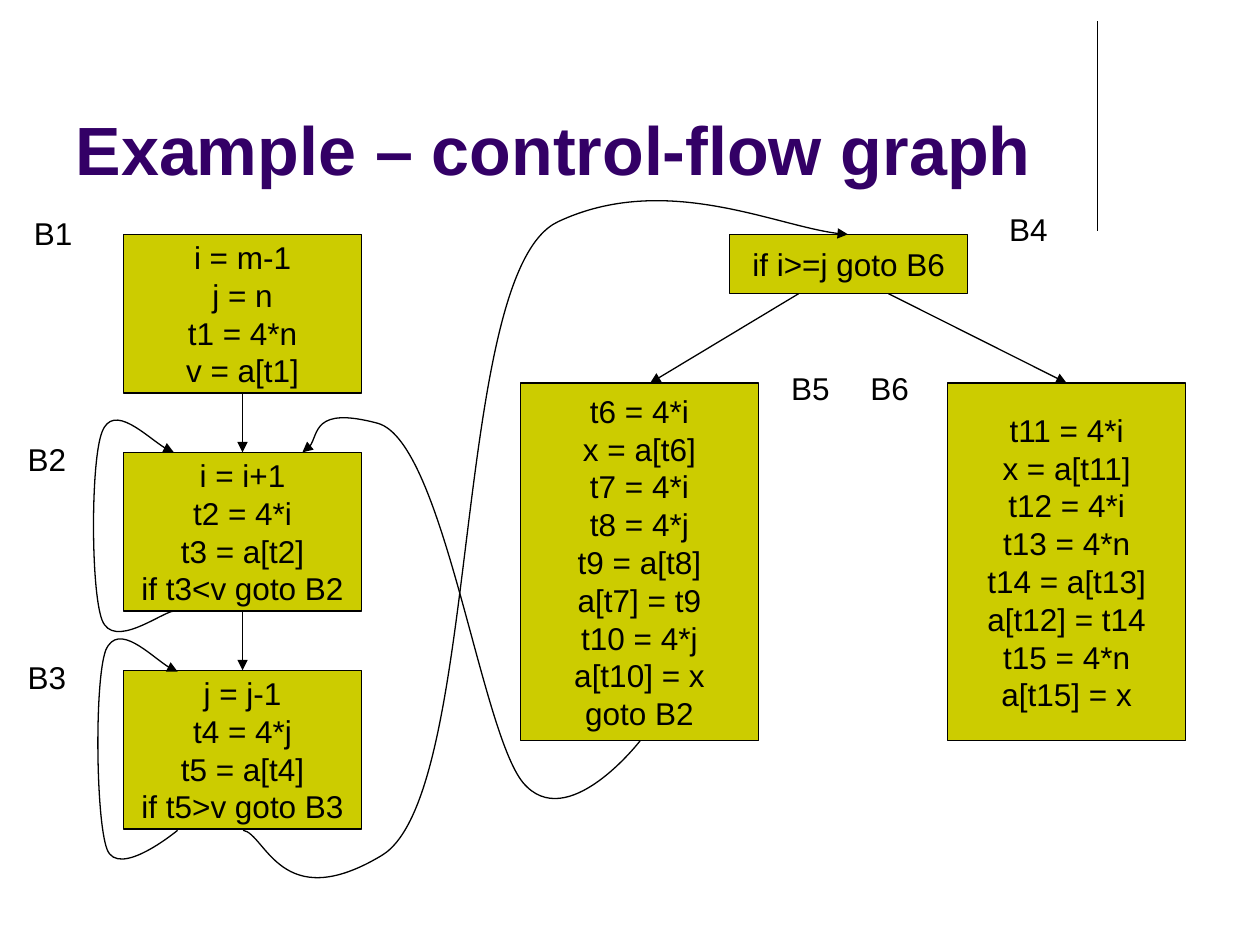
import pptx
import pptx.dml.color
import pptx.enum.shapes
import pptx.enum.text
import pptx.oxml
import pptx.oxml.ns
import pptx.util
from pptx.util import Inches

COLORS = {"title": "330066", "block": "CCCC00", "ink": "000000"}
ALIGN = pptx.enum.text.PP_ALIGN
ANCHOR = pptx.enum.text.MSO_ANCHOR
AUTO_SIZE = pptx.enum.text.MSO_AUTO_SIZE
BOTTOM_SIDE, TOP_SIDE = 2, 0
BLOCK_WIDTH = 1.89

# name: (left, top, height, code lines, label left, label top)
BLOCKS = {
    "B1": (0.98, 1.86, 1.26,
           ["i = m-1", "j = n", "t1 = 4*n", "v = a[t1]"], 0.17, 1.65),
    "B2": (0.98, 3.59, 1.26,
           ["i = i+1", "t2 = 4*i", "t3 = a[t2]", "if t3<v goto B2"], 0.12, 3.44),
    "B3": (0.98, 5.32, 1.26,
           ["j = j-1", "t4 = 4*j", "t5 = a[t4]", "if t5>v goto B3"], 0.12, 5.17),
    "B4": (5.79, 1.86, 0.47, ["if i>=j goto B6"], 7.91, 1.62),
    "B5": (4.13, 3.04, 2.84,
           ["t6 = 4*i", "x = a[t6]", "t7 = 4*i", "t8 = 4*j", "t9 = a[t8]",
            "a[t7] = t9", "t10 = 4*j", "a[t10] = x", "goto B2"], 6.18, 2.88),
    "B6": (7.52, 3.04, 2.84,
           ["t11 = 4*i", "x = a[t11]", "t12 = 4*i", "t13 = 4*n", "t14 = a[t13]",
            "a[t12] = t14", "t15 = 4*n", "a[t15] = x"], 6.81, 2.88),
}

# Start point, then two control points and an end point per Bezier segment
JUMPS = {
    "B3 to B4": [(1.93, 6.59), (2.11, 6.62), (2.23, 7.27), (3.03, 6.79),
                 (3.83, 6.31), (3.57, 2.16), (4.43, 1.76),
                 (5.28, 1.36), (6.25, 1.84), (6.73, 1.86)],
    "B5 to B2": [(5.08, 5.88), (5.08, 5.88), (4.5, 6.63), (4.15, 6.21),
                 (3.81, 5.79), (3.52, 3.51), (3, 3.36),
                 (2.48, 3.22), (2.53, 3.55), (2.4, 3.59)],
    "B2 to B2": [(1.38, 4.85), (1.28, 4.86), (0.9, 5.16), (0.81, 4.92),
                 (0.72, 4.68), (0.72, 3.66), (0.81, 3.43),
                 (0.9, 3.19), (1.26, 3.56), (1.38, 3.59)],
    "B3 to B3": [(1.41, 6.59), (1.41, 6.59), (0.94, 6.98), (0.85, 6.74),
                 (0.76, 6.5), (0.75, 5.4), (0.84, 5.16),
                 (0.94, 4.93), (1.29, 5.3), (1.41, 5.33)],
}


def rgb(name):
    return pptx.dml.color.RGBColor.from_string(COLORS[name])


def write_text(frame, lines, size=18, color="ink", bold=False, align=ALIGN.LEFT,
               anchor=ANCHOR.TOP, wrap=False, auto_size=AUTO_SIZE.NONE):
    frame.word_wrap = wrap
    frame.auto_size = auto_size
    frame.vertical_anchor = anchor
    for index, line in enumerate(lines):
        paragraph = frame.paragraphs[0] if index == 0 else frame.add_paragraph()
        paragraph.alignment = align
        run = paragraph.add_run()
        run.text = line
        run.font.name = "Arial"
        run.font.size = pptx.util.Pt(size)
        run.font.bold = bold
        run.font.color.rgb = rgb(color)


def style_line(line, arrow=False):
    line.color.rgb = rgb("ink")
    line.width = pptx.util.Pt(0.75)
    if arrow:
        pptx.oxml.ns.qn("a:tailEnd")
        tail = line._get_or_add_ln().makeelement(
            pptx.oxml.ns.qn("a:tailEnd"), {"type": "triangle"})
        line._get_or_add_ln().append(tail)


def add_title(slide, text):
    title = slide.shapes.title
    title.left, title.top = Inches(0.5), Inches(0.13)
    title.width, title.height = Inches(8.25), Inches(1.42)
    write_text(title.text_frame, [text], size=39, color="title", bold=True,
               anchor=ANCHOR.BOTTOM, wrap=True)


def add_block(slide, left, top, height, code):
    block = slide.shapes.add_shape(
        pptx.enum.shapes.MSO_SHAPE.RECTANGLE,
        Inches(left), Inches(top), Inches(BLOCK_WIDTH), Inches(height))
    block.shadow.inherit = False
    block.fill.solid()
    block.fill.fore_color.rgb = rgb("block")
    style_line(block.line)
    write_text(block.text_frame, code, align=ALIGN.CENTER, anchor=ANCHOR.MIDDLE)
    return block


def add_label(slide, left, top, name):
    label = slide.shapes.add_textbox(
        Inches(left), Inches(top), Inches(0.51), Inches(0.4))
    write_text(label.text_frame, [name], auto_size=AUTO_SIZE.SHAPE_TO_FIT_TEXT)


def add_line(slide, start=(0, 0), end=(0, 0), source=None, target=None, arrow=True):
    """Draw a straight line; source and target blocks override its end points."""
    connector = slide.shapes.add_connector(
        pptx.enum.shapes.MSO_CONNECTOR.STRAIGHT,
        *(Inches(value) for value in (*start, *end)))
    if source is not None:
        connector.begin_connect(source, BOTTOM_SIDE)
    if target is not None:
        connector.end_connect(target, TOP_SIDE)
    style_line(connector.line, arrow)
    properties = connector._element.spPr
    properties.append(properties.makeelement(pptx.oxml.ns.qn("a:effectLst"), {}))


def add_curve(slide, points):
    """Draw a Bezier arrow by merging each three line steps into one curve step."""
    start, *rest = [(Inches(x), Inches(y)) for x, y in points]
    builder = slide.shapes.build_freeform(*start)
    builder.add_line_segments(rest, close=False)
    curve = builder.convert_to_shape()
    steps = list(curve._element.iter(pptx.oxml.ns.qn("a:lnTo")))
    for first in range(0, len(steps), 3):
        bezier = steps[first].makeelement(pptx.oxml.ns.qn("a:cubicBezTo"), {})
        steps[first].addprevious(bezier)
        for step in steps[first:first + 3]:
            bezier.append(step[0])
            step.getparent().remove(step)
    curve.shadow.inherit = False
    curve.fill.background()
    style_line(curve.line, arrow=True)


def main():
    deck = pptx.Presentation()
    deck.slide_width, deck.slide_height = Inches(10), Inches(7.5)
    slide = deck.slides.add_slide(deck.slide_layouts[5])

    add_line(slide, (8.71, 0.17), (8.71, 1.83), arrow=False)
    add_title(slide, "Example – control-flow graph")
    blocks = {name: add_block(slide, *block[:4]) for name, block in BLOCKS.items()}

    add_line(slide, (6.34, 2.33), (5.16, 3.04))
    add_line(slide, (7.05, 2.33), target=blocks["B6"])
    add_line(slide, source=blocks["B1"], target=blocks["B2"])
    add_line(slide, source=blocks["B2"], target=blocks["B3"])
    for points in JUMPS.values():
        add_curve(slide, points)

    for name, block in BLOCKS.items():
        add_label(slide, *block[4:], name)
    deck.save("out.pptx")


if __name__ == "__main__":
    main()
